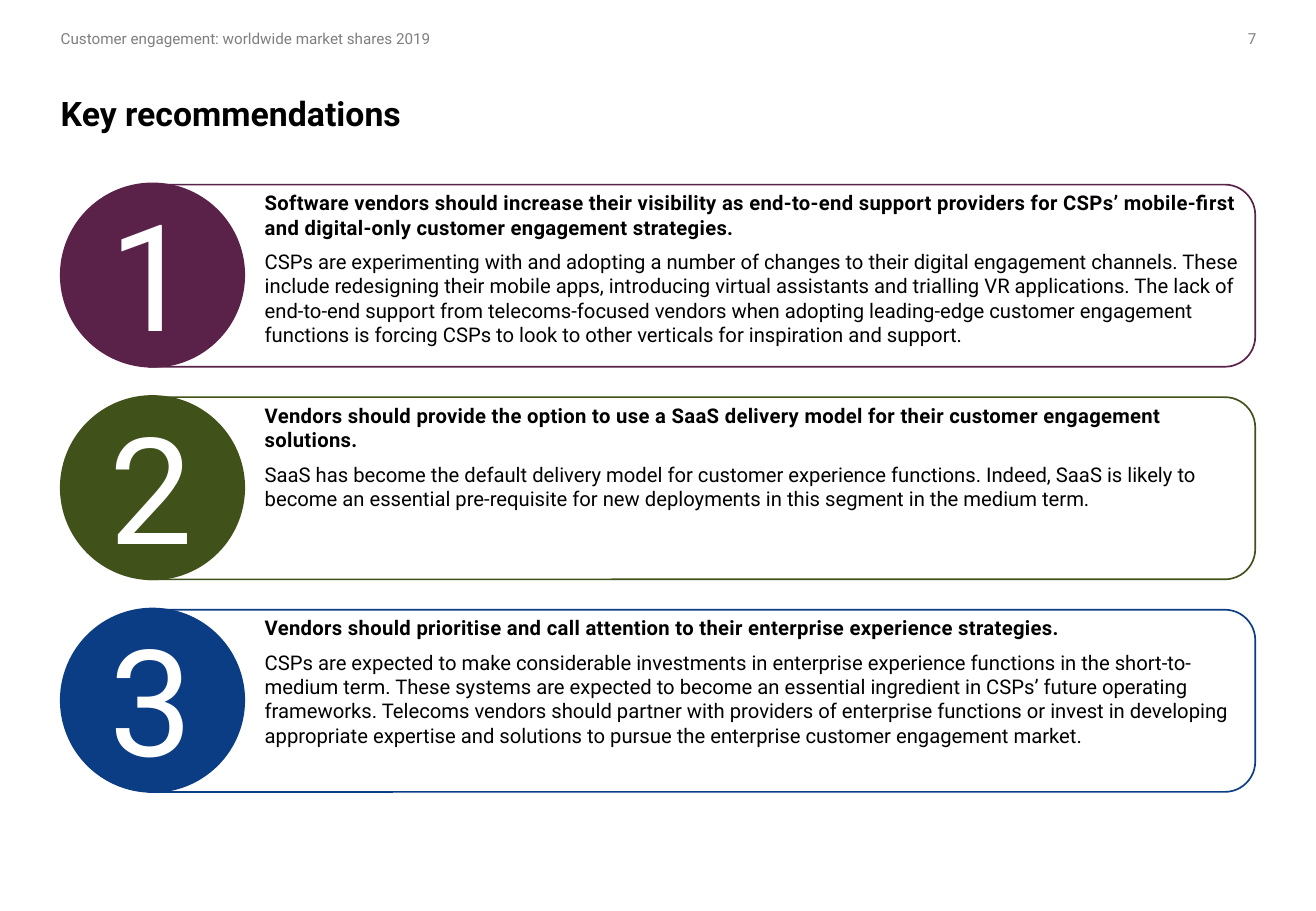
from pptx import Presentation
from pptx.dml.color import RGBColor
from pptx.enum.shapes import MSO_SHAPE as Geo
from pptx.enum.text import MSO_ANCHOR as Anchor, PP_ALIGN as Align
from pptx.util import Inches, Pt


def tint(code):
    """Turn a hex string into a colour."""
    return RGBColor.from_string(code)


class Deck:
    """Hold the style and the current slide."""

    font = "Roboto"
    slim = (0, 0.05, 0, 0.05)

    def __init__(self, wide, high):
        """Open a deck with one blank slide."""
        self.prs = Presentation()
        self.prs.slide_width, self.prs.slide_height = Inches(wide), Inches(high)
        self.slide = self.prs.slides.add_slide(self.prs.slide_layouts[6])

    def frame(self, shape, pad, anchor, wrap=True):
        """Set up the text frame of a shape."""
        sides = ("left", "top", "right", "bottom")
        form = {f"margin_{side}": Inches(gap) for side, gap in zip(sides, pad)}
        form.update(vertical_anchor=anchor, word_wrap=wrap)
        for key, value in form.items():
            setattr(shape.text_frame, key, value)
        return shape.text_frame

    def fill(self, para, text, size, color="000000", bold=False, track=0, **form):
        """Fill a paragraph with one styled run."""
        run = para.add_run()
        run.text = text
        style = {"name": self.font, "size": Pt(size), "bold": bold}
        for key, value in style.items():
            setattr(run.font, key, value)
        run.font.color.rgb = tint(color)
        if track:
            run._r.get_or_add_rPr().set("spc", str(track))
        for key, value in form.items():
            setattr(para, key, value)

    def text(self, box, pad=slim, anchor=Anchor.MIDDLE, wrap=True):
        """Add a text box and return its frame."""
        shape = self.slide.shapes.add_textbox(*map(Inches, box))
        return self.frame(shape, pad, anchor, wrap)

    def label(self, box, text, size, wrap=True, **form):
        """Add a text box with one line."""
        self.fill(self.text(box, wrap=wrap).paragraphs[0], text, size, **form)

    def shape(self, kind, box, color, solid):
        """Add a preset shape, solid or in outline."""
        shape = self.slide.shapes.add_shape(kind, *map(Inches, box))
        shape.shadow.inherit = False
        if solid:
            shape.fill.solid()
            shape.fill.fore_color.rgb = tint(color)
        else:
            shape.fill.background()
        shape.line.color.rgb = tint(color)
        shape.line.width = Pt(1)
        return shape

    def card(self, top, mark, color, head, body):
        """Add a numbered recommendation."""
        wide, high, left = 9.11, 1.5, 1.22
        mid = top + 0.01 + high / 2
        box = (left + (wide - high) / 2, mid - wide / 2, high, wide)
        self.shape(Geo.ROUND_2_SAME_RECTANGLE, box, color, False).rotation = 90
        disc = self.shape(Geo.OVAL, (0.5, top, 1.51, 1.51), color, True)
        frame = self.frame(disc, (0.08, 0, 0.1, 0.05), Anchor.MIDDLE)
        self.fill(frame.paragraphs[0], mark, 88, "FFFFFF", alignment=Align.CENTER)
        frame = self.text((2.08, top + 0.01, 8.25, high),
                          (0.1, 0.05, 0.1, 0.05), Anchor.TOP)
        self.fill(frame.paragraphs[0], head, 12, bold=True, track=20,
                  space_after=Pt(6))
        self.fill(frame.add_paragraph(), body, 12, space_after=Pt(8))


CARDS = [
    ("5A2149",
     "Software vendors should increase their visibility as end-to-end support "
     "providers for CSPs’ mobile-first and digital-only customer engagement "
     "strategies.",
     "CSPs are experimenting with and adopting a number of changes to their "
     "digital engagement channels. These include redesigning their mobile apps, "
     "introducing virtual assistants and trialling VR applications. The lack of "
     "end-to-end support from telecoms-focused vendors when adopting leading-edge "
     "customer engagement functions is forcing CSPs to look to other verticals "
     "for inspiration and support."),
    ("405219",
     "Vendors should provide the option to use a SaaS delivery model for their "
     "customer engagement solutions.",
     "SaaS has become the default delivery model for customer experience "
     "functions. Indeed, SaaS is likely to become an essential pre-requisite for "
     "new deployments in this segment in the medium term."),
    ("0B3D85",
     "Vendors should prioritise and call attention to their enterprise "
     "experience strategies.",
     "CSPs are expected to make considerable investments in enterprise experience "
     "functions in the short-to-medium term. These systems are expected to become "
     "an essential ingredient in CSPs’ future operating frameworks. Telecoms "
     "vendors should partner with providers of enterprise functions or invest in "
     "developing appropriate expertise and solutions to pursue the enterprise "
     "customer engagement market."),
]


def main():
    """Build the slide and save it."""
    deck = Deck(10.83, 7.5)
    deck.label((0.5, 0.16, 3.23, 0.31),
               "Customer engagement: worldwide market shares 2019", 9, wrap=False,
               color="7F7F7F", space_after=Pt(8))
    deck.label((0.5, 0.51, 9.84, 0.83), "Key recommendations", 20, bold=True,
               line_spacing=Pt(25))
    deck.label((9.59, 0.16, 0.75, 0.31), "7", 9, wrap=False, color="808080",
               alignment=Align.RIGHT)
    for row, (color, head, body) in enumerate(CARDS):
        deck.card(1.51 + 1.75 * row, str(row + 1), color, head, body)
    deck.prs.save("out.pptx")


if __name__ == "__main__":
    main()
